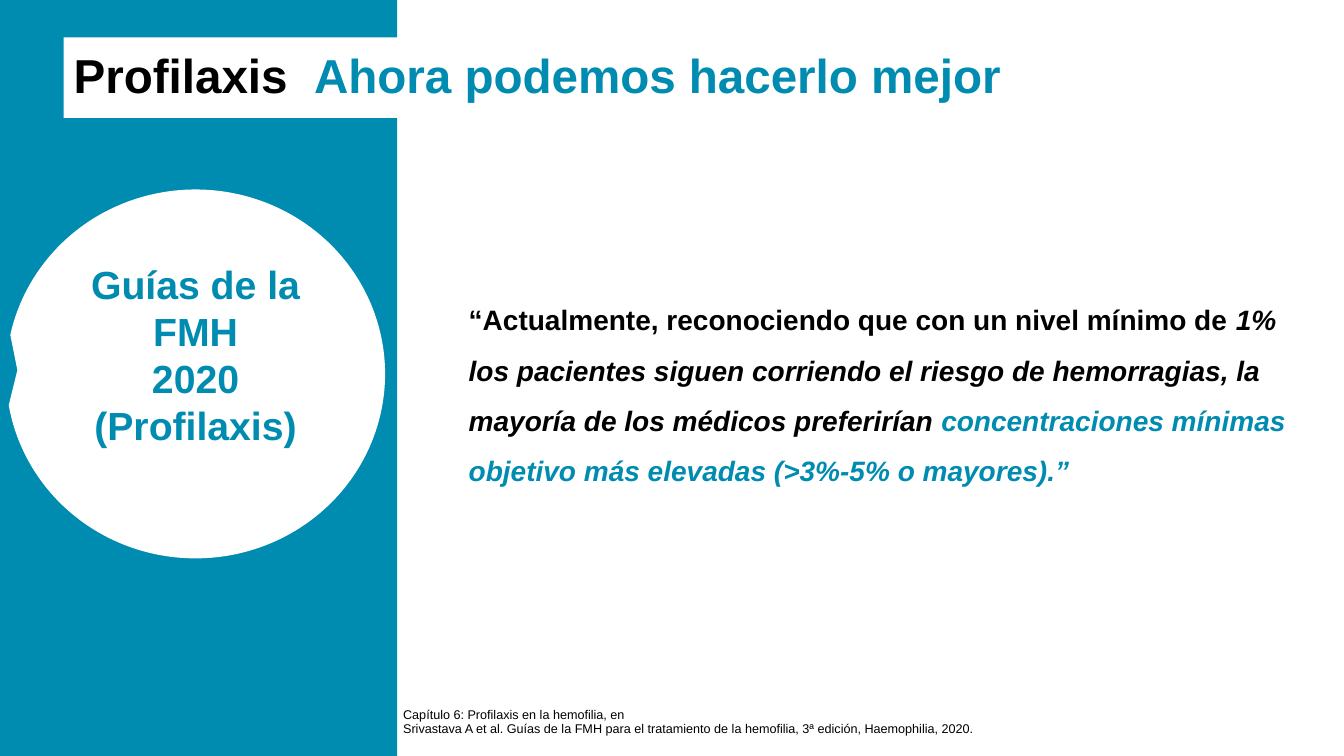
from dataclasses import dataclass

from pptx import Presentation
from pptx.dml.color import RGBColor
from pptx.enum.shapes import MSO_SHAPE
from pptx.enum.text import MSO_ANCHOR, MSO_AUTO_SIZE, PP_ALIGN
from pptx.util import Inches, Pt


@dataclass(frozen=True)
class Theme:
    teal: RGBColor = RGBColor(0x00, 0x8B, 0xB0)
    white: RGBColor = RGBColor(0xFF, 0xFF, 0xFF)
    black: RGBColor = RGBColor(0x00, 0x00, 0x00)
    font: str = "Arial"
    title_size: Pt = Pt(34)
    callout_size: Pt = Pt(28)
    quote_size: Pt = Pt(20)
    source_size: Pt = Pt(9)


THEME = Theme()


def set_attributes(target, values):
    for name, value in values.items():
        setattr(target, name, value)


def add_filled_shape(slide, kind, box, color):
    shape = slide.shapes.add_shape(kind, *map(Inches, box))
    shape.shadow.inherit = False
    shape.fill.solid()
    shape.fill.fore_color.rgb = color
    shape.line.fill.background()
    return shape


def write_paragraphs(shape, paragraphs, size, frame_format, paragraph_format):
    frame = shape.text_frame
    set_attributes(
        frame,
        {"word_wrap": True, "auto_size": MSO_AUTO_SIZE.NONE, **frame_format},
    )
    for index, runs in enumerate(paragraphs):
        paragraph = frame.add_paragraph() if index else frame.paragraphs[0]
        set_attributes(paragraph, {"alignment": PP_ALIGN.LEFT, **paragraph_format})
        for text, color, font_format in runs:
            run = paragraph.add_run()
            run.text = text
            run.font.color.rgb = color
            set_attributes(
                run.font, {"name": THEME.font, "size": size, **font_format}
            )


def add_title(slide, box):
    title = slide.shapes.title
    left, top, width, height = map(Inches, box)
    set_attributes(
        title, {"left": left, "top": top, "width": width, "height": height}
    )
    title.fill.solid()
    title.fill.fore_color.rgb = THEME.white
    bold = {"bold": True}
    write_paragraphs(
        title,
        [[("Profilaxis  ", THEME.black, bold),
          ("Ahora podemos hacerlo mejor", THEME.teal, bold)]],
        THEME.title_size,
        {"vertical_anchor": MSO_ANCHOR.MIDDLE},
        {"line_spacing": 0.9},
    )


def add_side_panel(slide, box):
    left, top, width, height = box
    band = add_filled_shape(slide, MSO_SHAPE.RECTANGLE, box, THEME.teal)
    slide.shapes.title.element.addprevious(band.element)

    callout_box = (left + 0.06, top + 1.88, width - 0.18, 3.66)
    callout = add_filled_shape(
        slide, MSO_SHAPE.OVAL_CALLOUT, callout_box, THEME.white
    )
    callout.adjustments[0] = -0.47
    callout.adjustments[1] = -0.01
    lines = ["Guías de la FMH", "2020", "(Profilaxis)"]
    write_paragraphs(
        callout,
        [[(line, THEME.teal, {"bold": True})] for line in lines],
        THEME.callout_size,
        {"vertical_anchor": MSO_ANCHOR.MIDDLE, "margin_bottom": Inches(0.43)},
        {"alignment": PP_ALIGN.CENTER},
    )


def add_quote(slide, box):
    quote = add_filled_shape(slide, MSO_SHAPE.RECTANGLE, box, THEME.white)
    bold = {"bold": True}
    bold_italic = {"bold": True, "italic": True}
    write_paragraphs(
        quote,
        [[
            ("“Actualmente, reconociendo que con un nivel mínimo de ",
             THEME.black, bold),
            ("1% los pacientes siguen corriendo el riesgo de hemorragias, "
             "la mayoría de los médicos preferirían ",
             THEME.black, bold_italic),
            ("concentraciones mínimas objetivo más elevadas "
             "(>3%-5% o mayores).”",
             THEME.teal, bold_italic),
        ]],
        THEME.quote_size,
        {"vertical_anchor": MSO_ANCHOR.MIDDLE},
        {"line_spacing": 1.5, "space_after": Pt(6)},
    )


def add_source(slide, box):
    source = slide.shapes.add_textbox(*map(Inches, box))
    lines = [
        "Capítulo 6: Profilaxis en la hemofilia, en",
        "Srivastava A et al. Guías de la FMH para el tratamiento de la "
        "hemofilia, 3ª edición, Haemophilia, 2020.",
    ]
    write_paragraphs(
        source,
        [[(line, THEME.black, {})] for line in lines],
        THEME.source_size,
        {"vertical_anchor": MSO_ANCHOR.BOTTOM, "margin_bottom": 0},
        {"line_spacing": 0.9},
    )


def main():
    presentation = Presentation()
    set_attributes(
        presentation,
        {"slide_width": Inches(13.33), "slide_height": Inches(7.5)},
    )
    slide = presentation.slides.add_slide(presentation.slide_layouts[5])
    add_title(slide, (0.63, 0.37, 12.7, 0.8))
    add_side_panel(slide, (0, 0, 3.94, 7.5))
    add_quote(slide, (4.55, 1.69, 8.58, 4.29))
    add_source(slide, (3.9, 6.93, 6.88, 0.37))
    presentation.save("out.pptx")


if __name__ == "__main__":
    main()
